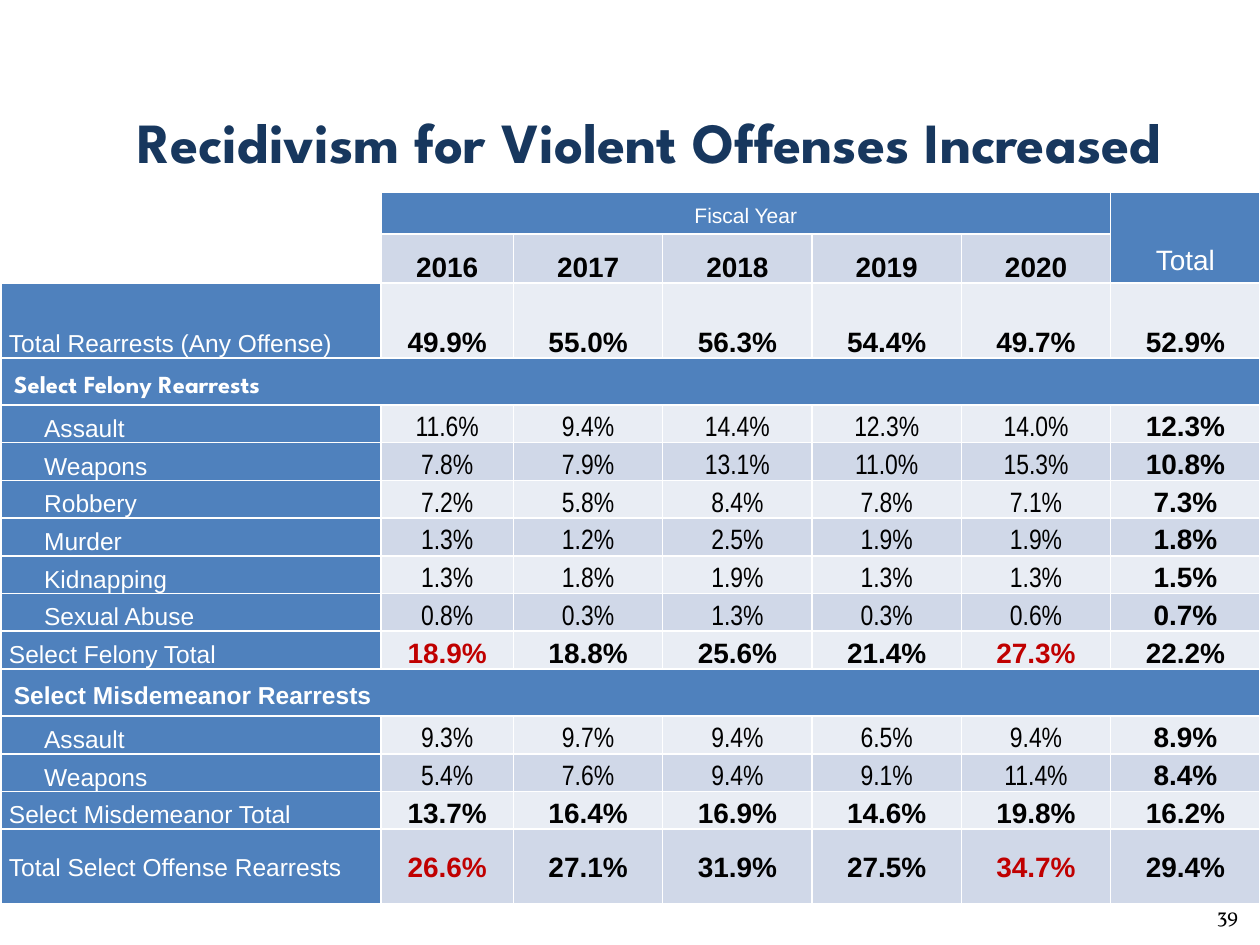
import pptx
import pptx.dml.color
import pptx.enum.text
import pptx.oxml
import pptx.oxml.ns
import pptx.util

Cm, Pt = pptx.util.Cm, pptx.util.Pt
RGBColor = pptx.dml.color.RGBColor
ALIGN = pptx.enum.text.PP_ALIGN
ANCHOR = pptx.enum.text.MSO_ANCHOR

NAVY = RGBColor(0x17, 0x37, 0x5E)
BLUE = RGBColor(0x4F, 0x81, 0xBD)
BAND_DARK = RGBColor(0xD0, 0xD8, 0xE8)
BAND_LIGHT = RGBColor(0xE9, 0xED, 0xF4)
RED = RGBColor(0xC0, 0x00, 0x00)
BLACK = RGBColor(0, 0, 0)
WHITE = RGBColor(0xFF, 0xFF, 0xFF)

TITLE = "Recidivism for Violent Offenses Increased"
PAGE_NUMBER = "39"
YEARS = ["2016", "2017", "2018", "2019", "2020"]
# (kind, label, percentages for each year and the total)
ROWS = [
    ("sum", "Total Rearrests (Any Offense)", "49.9 55.0 56.3 54.4 49.7 52.9"),
    ("section", "Select Felony Rearrests", ""),
    ("offense", "Assault", "11.6 9.4 14.4 12.3 14.0 12.3"),
    ("offense", "Weapons", "7.8 7.9 13.1 11.0 15.3 10.8"),
    ("offense", "Robbery", "7.2 5.8 8.4 7.8 7.1 7.3"),
    ("offense", "Murder", "1.3 1.2 2.5 1.9 1.9 1.8"),
    ("offense", "Kidnapping", "1.3 1.8 1.9 1.3 1.3 1.5"),
    ("offense", "Sexual Abuse", "0.8 0.3 1.3 0.3 0.6 0.7"),
    ("sum", "Select Felony Total", "18.9 18.8 25.6 21.4 27.3 22.2"),
    ("section", "Select Misdemeanor Rearrests", ""),
    ("offense", "Assault", "9.3 9.7 9.4 6.5 9.4 8.9"),
    ("offense", "Weapons", "5.4 7.6 9.4 9.1 11.4 8.4"),
    ("sum", "Select Misdemeanor Total", "13.7 16.4 16.9 14.6 19.8 16.2"),
    ("sum", "Total Select Offense Rearrests", "26.6 27.1 31.9 27.5 34.7 29.4"),
]
SECTION_FONTS = {"Select Felony Rearrests": "League Spartan"}
HIGHLIGHTS = {"18.9", "27.3", "26.6", "34.7"}

COLUMN_WIDTHS = [7.65, 2.67] + [3.01] * 5
HEADER_HEIGHTS = [0.85, 0.93]
ROW_HEIGHT, SECTION_HEIGHT, TALL_HEIGHT = 0.76, 0.95, 1.51
LAST_COLUMN = len(COLUMN_WIDTHS) - 1


def set_insets(box, side, top, bottom=None):
    box.margin_left = box.margin_right = Cm(side)
    box.margin_top = Cm(top)
    box.margin_bottom = Cm(top if bottom is None else bottom)


def write(frame, text, size, font, color, bold=False, align=ALIGN.LEFT):
    frame.text = text
    paragraph = frame.paragraphs[0]
    paragraph.alignment = align
    run_font = paragraph.runs[0].font
    run_font.size, run_font.name, run_font.bold = Pt(size), font, bold
    run_font.color.rgb = color
    return paragraph


def add_text(slide, box, text, size, font, color, bold, align, insets):
    frame = slide.shapes.add_textbox(*(Cm(length) for length in box)).text_frame
    frame.word_wrap = True
    frame.vertical_anchor = ANCHOR.MIDDLE
    set_insets(frame, *insets)
    write(frame, text, size, font, color, bold, align)


def outline(cell):
    """Draw a white 1 pt border on every side of the cell."""
    properties = cell._tc.get_or_add_tcPr()
    for side in ("lnL", "lnR", "lnT", "lnB"):
        properties.append(pptx.oxml.parse_xml(
            f'<a:{side} {pptx.oxml.ns.nsdecls("a")} w="12700"><a:solidFill>'
            f'<a:srgbClr val="{WHITE}"/></a:solidFill></a:{side}>'))


def fill_cell(cell, fill, text, size, color, font="Arial", bold=False,
              align=ALIGN.CENTER, wide_insets=False):
    cell.fill.solid()
    cell.fill.fore_color.rgb = fill
    if wide_insets:
        set_insets(cell, 0.25, 0.13)
    paragraph = write(cell.text_frame, text, size, font, color, bold, align)
    paragraph.line_spacing = 1.07
    return paragraph


def fill_header(table):
    table.cell(0, 1).merge(table.cell(0, len(YEARS)))
    table.cell(0, LAST_COLUMN).merge(table.cell(1, LAST_COLUMN))
    fill_cell(table.cell(0, 1), BLUE, "Fiscal Year", 12, WHITE, wide_insets=True)
    fill_cell(table.cell(0, LAST_COLUMN), BLUE, "Total", 16, WHITE, wide_insets=True)
    for column, year in enumerate(YEARS, 1):
        fill_cell(table.cell(1, column), BAND_DARK, year, 16, BLACK, bold=True)


def fill_row(table, row, kind, label, values):
    label_cell = table.cell(row, 0)
    if kind == "section":
        label_cell.merge(table.cell(row, LAST_COLUMN))
        fill_cell(label_cell, BLUE, label, 14, WHITE, SECTION_FONTS.get(label, "Arial"),
                  True, ALIGN.LEFT, wide_insets=True)
        return
    heading = fill_cell(label_cell, BLUE, label, 14, WHITE, align=ALIGN.LEFT)
    if kind == "offense":
        heading._p.get_or_add_pPr().set("indent", str(Cm(0.71)))
    band = BAND_DARK if row % 2 else BAND_LIGHT
    for column, value in enumerate(values.split(), 1):
        strong = kind == "sum" or column == LAST_COLUMN
        fill_cell(table.cell(row, column), band, value + "%", 16,
                  RED if value in HIGHLIGHTS else BLACK,
                  "Arial" if strong else "Arial Narrow", strong)


def add_rearrest_table(slide):
    heights = HEADER_HEIGHTS + [
        SECTION_HEIGHT if kind == "section" else ROW_HEIGHT for kind, _, _ in ROWS]
    heights[len(HEADER_HEIGHTS)] = heights[-1] = TALL_HEIGHT
    table = slide.shapes.add_table(
        len(heights), len(COLUMN_WIDTHS), Cm(0.03), Cm(3.87),
        Cm(sum(COLUMN_WIDTHS)), Cm(sum(heights))).table
    for column, width in zip(table.columns, COLUMN_WIDTHS):
        column.width = Cm(width)
    for row, height in zip(table.rows, heights):
        row.height = Cm(height)
    for cell in table.iter_cells():
        set_insets(cell, 0.15, 0)
        cell.vertical_anchor = ANCHOR.BOTTOM
        outline(cell)
        cell.fill.background()
    fill_header(table)
    for row, content in enumerate(ROWS, len(HEADER_HEIGHTS)):
        fill_row(table, row, *content)
    for cell in table.rows[len(heights) - 1].cells:
        cell.vertical_anchor = ANCHOR.MIDDLE


def main():
    deck = pptx.Presentation()
    deck.slide_width, deck.slide_height = Cm(25.4), Cm(19.05)
    slide = deck.slides.add_slide(deck.slide_layouts[6])
    add_text(slide, (23.67, 17.91, 1.47, 1.07), PAGE_NUMBER, 12, "Vollkorn",
             BLACK, False, ALIGN.RIGHT, (0.18, 0.1))
    add_text(slide, (0.41, 1.14, 25.37, 3.48), TITLE, 32.4, "League Spartan",
             NAVY, True, ALIGN.CENTER, (0.18, 0.1, 0.2))
    add_rearrest_table(slide)
    deck.save("out.pptx")


if __name__ == "__main__":
    main()
